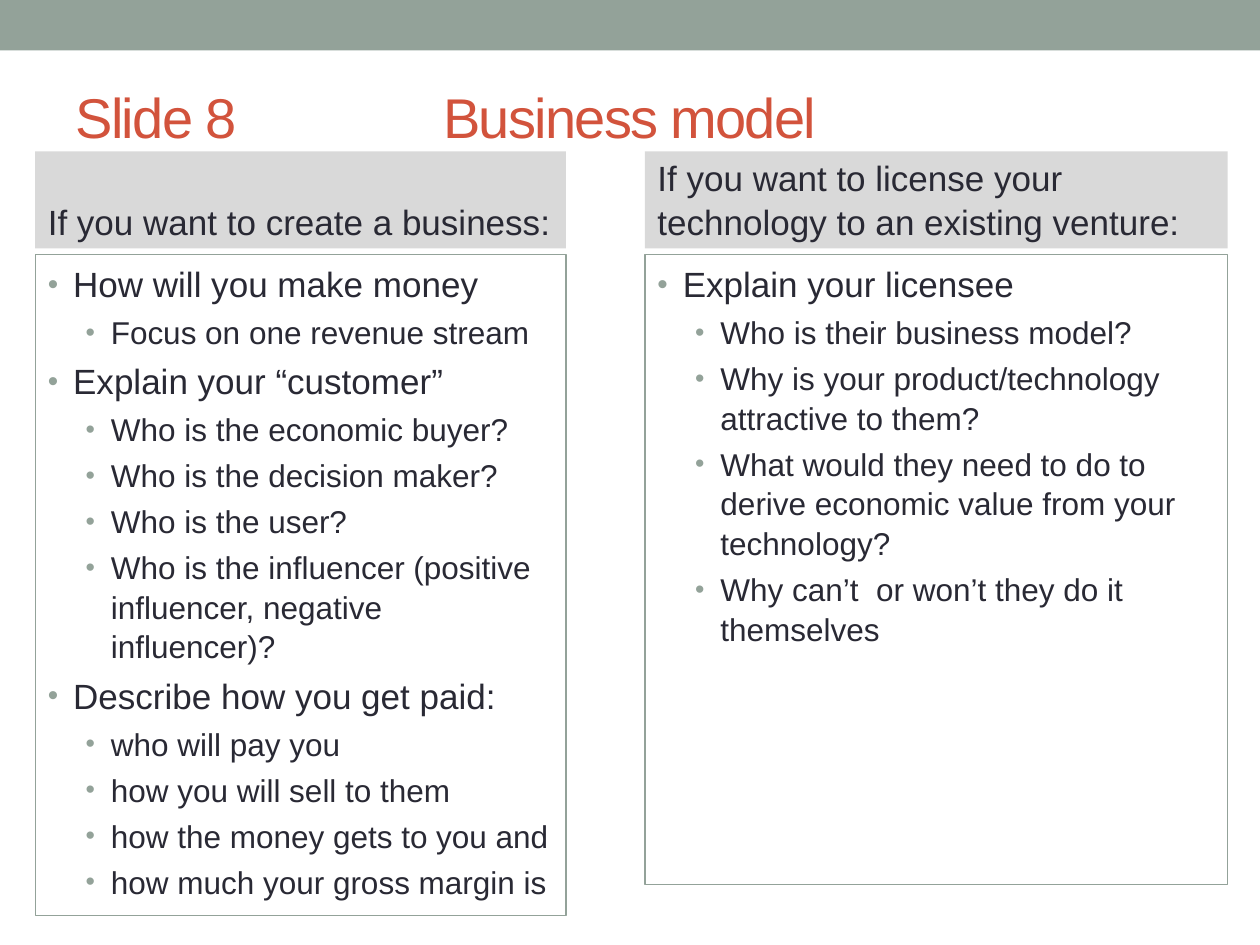
from pptx import Presentation
from pptx.dml.color import RGBColor
from pptx.enum.shapes import MSO_SHAPE as Shape
from pptx.enum.text import MSO_ANCHOR as Anchor, MSO_AUTO_SIZE as AutoSize, PP_ALIGN as Align
from pptx.oxml.ns import qn
from pptx.util import Cm, Pt
from lxml.etree import SubElement

FONT = "Arial"
SAGE, RUST, INK, GREY = "93A299", "D2533C", "292934", "D9D9D9"
COMPARISON_LAYOUT = 4
HEADING_HEIGHT, LIST_OFFSET = 1.96, 2.08

BUSINESS = [
    (0, "How will you make money"),
    (1, "Focus on one revenue stream"),
    (0, "Explain your “customer”"),
    (1, "Who is the economic buyer?"),
    (1, "Who is the decision maker?"),
    (1, "Who is the user?"),
    (1, "Who is the influencer (positive influencer, negative influencer)?"),
    (0, "Describe how you get paid:"),
    (1, "who will pay you"),
    (1, "how you will sell to them"),
    (1, "how the money gets to you and"),
    (1, "how much your gross margin is"),
]
LICENSE = [
    (0, "Explain your licensee"),
    (1, "Who is their business model?"),
    (1, "Why is your product/technology attractive to them?"),
    (1, "What would they need to do to derive economic value from your technology?"),
    (1, "Why can’t  or won’t they do it themselves"),
]


def color(value):
    return RGBColor.from_string(value)


def place(shape, left, top, width, height):
    shape.left, shape.top = Cm(left), Cm(top)
    shape.width, shape.height = Cm(width), Cm(height)


def prepare_frame(shape, anchor):
    frame = shape.text_frame
    frame.word_wrap = True
    frame.auto_size = AutoSize.NONE
    frame.vertical_anchor = anchor
    return frame


def add_span(para, text, size, ink):
    span = para.add_run()
    span.text = text
    span.font.name = FONT
    span.font.size = Pt(size)
    span.font.bold = False
    span.font.color.rgb = color(ink)
    return span


def add_bullet(para, level):
    para.level = level
    props = para._p.get_or_add_pPr()
    props.set("marL", str(Cm(1.27 if level else 0.51)))
    props.set("indent", str(Cm(-0.51)))
    SubElement(SubElement(props, qn("a:buClr")), qn("a:srgbClr"), val=SAGE)
    SubElement(props, qn("a:buSzPct"), val="85000")
    SubElement(props, qn("a:buFont"), typeface=FONT)
    SubElement(props, qn("a:buChar"), char="•")


def add_top_bar(page, left, top, width, height):
    bar = page.shapes.add_shape(Shape.RECTANGLE, Cm(left), Cm(top), Cm(width), Cm(height))
    bar.shadow.inherit = False
    bar.fill.solid()
    bar.fill.fore_color.rgb = color(SAGE)
    bar.line.fill.background()


def fill_title(title, box, label, topic):
    place(title, *box)
    para = prepare_frame(title, Anchor.MIDDLE).paragraphs[0]
    para.alignment = Align.LEFT
    tabs = SubElement(para._p.get_or_add_pPr(), qn("a:tabLst"))
    SubElement(tabs, qn("a:tab"), pos=str(Cm(7.41)), algn="l")
    span = add_span(para, f"{label}\t{topic}", 32, RUST)
    span.font._element.set("spc", "-100")


def fill_heading(heading, text):
    heading.fill.solid()
    heading.fill.fore_color.rgb = color(GREY)
    para = prepare_frame(heading, Anchor.BOTTOM).paragraphs[0]
    para.space_before = Pt(0)
    para.line_spacing = 1.05
    add_span(para, text, 20, INK)


def fill_list(body, items):
    body.line.color.rgb = color(SAGE)
    body.line.width = Pt(0.75)
    frame = prepare_frame(body, Anchor.TOP)
    for index, (level, text) in enumerate(items):
        para = frame.add_paragraph() if index else frame.paragraphs[0]
        size = 18 if level else 20
        add_bullet(para, level)
        para.space_before = Pt(size * 0.2 if index else 0)
        para.line_spacing = 1.05
        add_span(para, text, size, INK)


def fill_column(heading, body, box, heading_text, items):
    left, top, width, height = box
    place(heading, left, top, width, HEADING_HEIGHT)
    place(body, left, top + LIST_OFFSET, width, height - LIST_OFFSET)
    fill_heading(heading, heading_text)
    fill_list(body, items)


def main():
    deck = Presentation()
    deck.slide_width, deck.slide_height = Cm(25.4), Cm(19.05)
    page = deck.slides.add_slide(deck.slide_layouts[COMPARISON_LAYOUT])
    title, *parts = page.placeholders
    add_top_bar(page, 0, 0, 25.4, 1.02)
    fill_title(title, (1.27, 1.47, 22.86, 1.73), "Slide 8", "Business model")
    fill_column(*parts[:2], (0.71, 3.05, 10.7, 15.41),
                "If you want to create a business:", BUSINESS)
    fill_column(*parts[2:], (13, 3.05, 11.75, 14.78),
                "If you want to license your technology to an existing venture:", LICENSE)
    deck.save("out.pptx")


if __name__ == "__main__":
    main()
